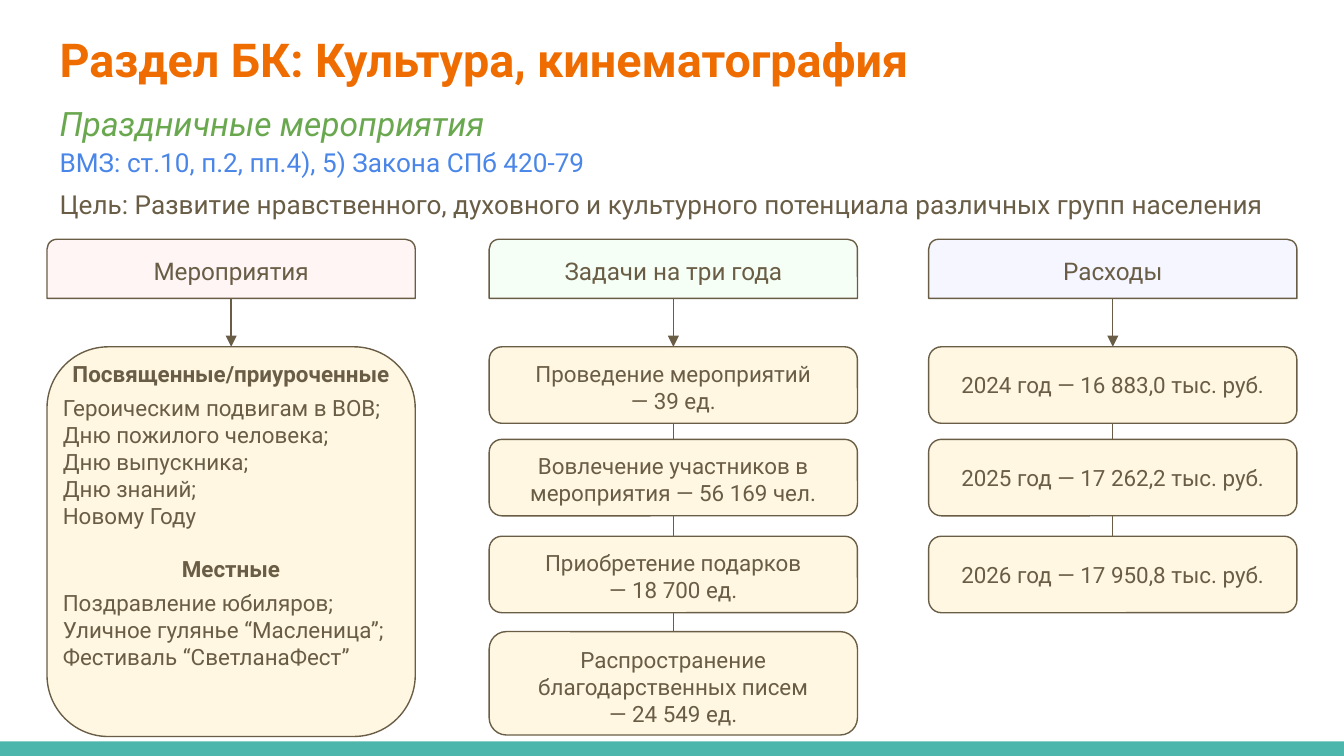
from lxml import etree
from pptx import Presentation
from pptx.dml.color import RGBColor
from pptx.enum.shapes import MSO_CONNECTOR, MSO_SHAPE
from pptx.enum.text import MSO_ANCHOR, PP_ALIGN
from pptx.oxml.ns import qn
from pptx.util import Pt

RECTANGLE = MSO_SHAPE.RECTANGLE
ROUNDED = MSO_SHAPE.ROUNDED_RECTANGLE
TOP_ROUNDED = MSO_SHAPE.ROUND_2_SAME_RECTANGLE
STRAIGHT = MSO_CONNECTOR.STRAIGHT
TOP, MIDDLE = MSO_ANCHOR.TOP, MSO_ANCHOR.MIDDLE
LEFT, CENTER = PP_ALIGN.LEFT, PP_ALIGN.CENTER

COLORS = {
    "title": "EF6C00",
    "subtitle": "6AA84F",
    "law": "4A86E8",
    "text": "695D46",
    "card": "FFF7E1",
    "events": "FFF5F5",
    "tasks": "F6FFF5",
    "costs": "F5F6FF",
    "footer": "4DB6AC",
}

COLUMN_WIDTH = 197.3
HEADER_TOP, HEADER_HEIGHT = 128.2, 31.7
CARD_TOPS = [185.8, 235.4, 287.3, 338.4]
CARD_HEIGHT, LAST_CARD_HEIGHT, EVENTS_HEIGHT = 41, 55.4, 208.8

presentation = Presentation()
presentation.slide_width = Pt(720)
presentation.slide_height = Pt(405)
slide = presentation.slides.add_slide(presentation.slide_layouts[6])
shapes = slide.shapes


def write(shape, lines, size, color="text", align=CENTER, anchor=MIDDLE, margin=7.2):
    frame = shape.text_frame
    frame.word_wrap = True
    frame.vertical_anchor = anchor
    frame.margin_left = frame.margin_right = Pt(margin)
    frame.margin_top = frame.margin_bottom = Pt(margin)
    frame.text = "\n".join(lines)
    for paragraph in frame.paragraphs:
        paragraph.alignment = align
        for run in paragraph.runs:
            run.font.name = "Roboto"
            run.font.size = Pt(size)
            run.font.color.rgb = RGBColor.from_string(COLORS[color])
    return frame.paragraphs


def add_box(kind, left, top, width, height, fill, outlined=True):
    shape = shapes.add_shape(kind, Pt(left), Pt(top), Pt(width), Pt(height))
    shape.shadow.inherit = False
    shape.fill.solid()
    shape.fill.fore_color.rgb = RGBColor.from_string(COLORS[fill])
    if outlined:
        shape.line.color.rgb = RGBColor.from_string(COLORS["text"])
        shape.line.width = Pt(0.75)
    else:
        shape.line.fill.background()
    return shape


add_box(RECTANGLE, 0, 397.2, 720, 7.8, "footer", outlined=False)

headings = [
    ("Раздел БК: Культура, кинематография", 8.6, 45.4, 25, "title", MIDDLE),
    ("Праздничные мероприятия", 44.6, 33.1, 18, "subtitle", TOP),
    ("ВМЗ: ст.10, п.2, пп.4), 5) Закона СПб 420-79", 71.3, 31.7, 14, "law", TOP),
    ("Цель: Развитие нравственного, духовного и культурного потенциала "
     "различных групп населения", 93.6, 31.7, 14, "text", TOP),
]
for text, top, height, size, color, anchor in headings:
    heading = shapes.add_textbox(Pt(24.8), Pt(top), Pt(686), Pt(height))
    paragraph = write(heading, [text], size, color, LEFT, anchor)[0]
    font = paragraph.runs[0].font
    font.bold = color == "title"
    font.italic = color == "subtitle"
    if color == "subtitle":
        paragraph.line_spacing = 1.15

tasks = [
    ["Проведение мероприятий", "— 39 ед."],
    ["Вовлечение участников в мероприятия — 56 169 чел."],
    ["Приобретение подарков", "— 18 700 ед."],
    ["Распространение благодарственных писем", "— 24 549 ед."],
]
costs = [
    ["2024 год — 16 883,0 тыс. руб."],
    ["2025 год — 17 262,2 тыс. руб."],
    ["2026 год — 17 950,8 тыс. руб."],
]
columns = [
    ("Мероприятия", 25.2, "events", [], MIDDLE),
    ("Задачи на три года", 262.1, "tasks", tasks, TOP),
    ("Расходы", 497.5, "costs", costs, MIDDLE),
]
for title, left, fill, cards, anchor in columns:
    header = add_box(TOP_ROUNDED, left, HEADER_TOP, COLUMN_WIDTH, HEADER_HEIGHT, fill)
    write(header, [title], 13, margin=5)

    bottom = HEADER_TOP + HEADER_HEIGHT
    links = [(bottom, CARD_TOPS[0])]
    for index, (top, lines) in enumerate(zip(CARD_TOPS, cards)):
        height = LAST_CARD_HEIGHT if index == 3 else CARD_HEIGHT
        card = add_box(ROUNDED, left, top, COLUMN_WIDTH, height, "card")
        write(card, lines, 12, anchor=anchor, margin=5)
        if index:
            links.append((bottom, top))
        bottom = top + height

    center = left + COLUMN_WIDTH / 2
    for index, (start, end) in enumerate(links):
        link = shapes.add_connector(STRAIGHT, Pt(center), Pt(start), Pt(center), Pt(end))
        link.line.color.rgb = RGBColor.from_string(COLORS["text"])
        link.line.width = Pt(0.75)
        if index == 0:
            etree.SubElement(link.line._get_or_add_ln(), qn("a:tailEnd"), type="triangle")
        etree.SubElement(link._element.spPr, qn("a:effectLst"))

event_groups = {
    "Посвященные/приуроченные": [
        "Героическим подвигам в ВОВ;",
        "Дню пожилого человека;",
        "Дню выпускника;",
        "Дню знаний;",
        "Новому Году",
    ],
    "Местные": [
        "Поздравление юбиляров;",
        "Уличное гулянье “Масленица”;",
        "Фестиваль “СветланаФест”",
    ],
}
add_box(ROUNDED, 25.2, CARD_TOPS[0], COLUMN_WIDTH, EVENTS_HEIGHT, "card")
event_list = shapes.add_textbox(Pt(26.6), Pt(CARD_TOPS[0]), Pt(194.4), Pt(193))
event_lines = [line for group, events in event_groups.items() for line in [group, *events]]
for index, paragraph in enumerate(write(event_list, event_lines, 12, align=LEFT, anchor=TOP)):
    if paragraph.text in event_groups:
        paragraph.alignment = CENTER
        paragraph.runs[0].font.bold = True
        paragraph.space_before = Pt(14 if index else 0)
        paragraph.space_after = Pt(4)

presentation.save("out.pptx")
